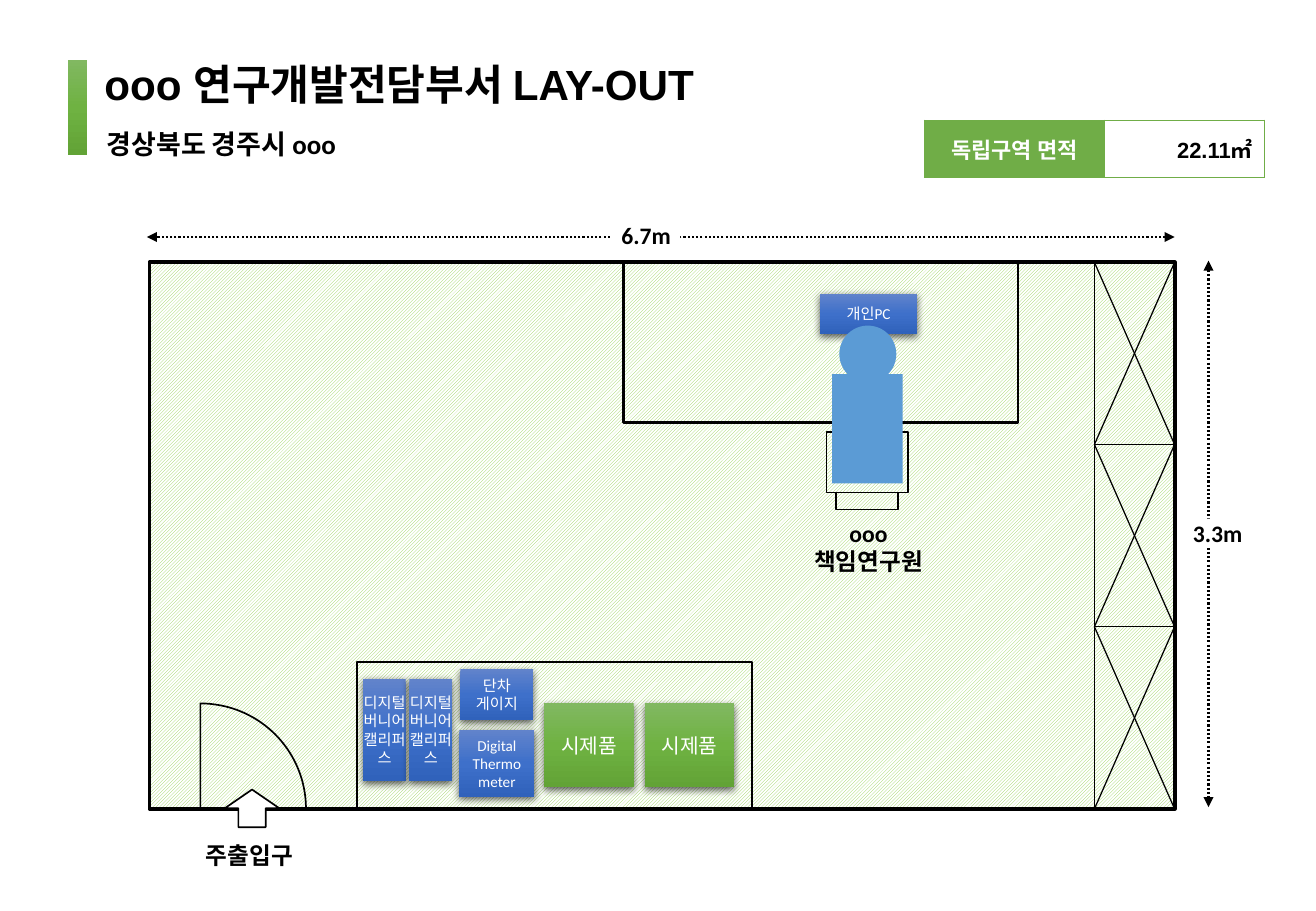
from copy import deepcopy
from math import cos, pi, sin

from lxml.etree import SubElement
from pptx import Presentation
from pptx.dml.color import RGBColor
from pptx.enum.dml import MSO_LINE as Dash, MSO_PATTERN as Pattern
from pptx.enum.shapes import MSO_CONNECTOR as Conn, MSO_SHAPE as Shape
from pptx.enum.text import MSO_ANCHOR as Anchor, MSO_AUTO_SIZE as Auto, PP_ALIGN as Align
from pptx.oxml.ns import qn
from pptx.util import Pt

BLACK = RGBColor(0x00, 0x00, 0x00)
WHITE = RGBColor(0xFF, 0xFF, 0xFF)
GREEN = RGBColor(0x70, 0xAD, 0x47)
HATCH = RGBColor(0x92, 0xD0, 0x50)
PERSON = RGBColor(0x5B, 0x9B, 0xD5)
GREENS = [RGBColor(0x81, 0xB8, 0x61), RGBColor(0x6F, 0xB2, 0x42), RGBColor(0x62, 0xA3, 0x36)]
BLUES = [RGBColor(0x61, 0x83, 0xCB), RGBColor(0x3E, 0x70, 0xCA), RGBColor(0x30, 0x62, 0xBB)]


def write(tf, text, size=14, font="Calibri", color=BLACK, bold=True, align=Align.CENTER,
          anchor=Anchor.TOP, margin=None, spacing=None, wrap=True, auto=Auto.NONE):
    """Fill a text frame, one paragraph to a line of text."""
    tf.word_wrap, tf.auto_size, tf.vertical_anchor = wrap, auto, anchor
    if margin is not None:
        tf.margin_left = tf.margin_right = tf.margin_top = tf.margin_bottom = Pt(margin)
    for i, line in enumerate(text.split("\n")):
        p = tf.add_paragraph() if i else tf.paragraphs[0]
        p.alignment, p.line_spacing = align, spacing
        r = p.add_run()
        r.text = line
        r.font.size, r.font.name, r.font.bold = Pt(size), font, bold
        r.font.color.rgb = color


def paint(sp, fill=None, line=None):
    """Give a shape a solid fill, a black outline of some width, or neither."""
    sp.shadow.inherit = False
    if fill is None:
        sp.fill.background()
    else:
        sp.fill.solid()
        sp.fill.fore_color.rgb = fill
    if line is None:
        sp.line.fill.background()
    else:
        sp.line.color.rgb, sp.line.width = BLACK, Pt(line)


def add_shape(s, kind, box, fill=None, line=None):
    """Add a preset shape in a box of points."""
    sp = s.shapes.add_shape(kind, *map(Pt, box))
    paint(sp, fill, line)
    return sp


def add_text(s, box, text, **fmt):
    """Add a text box in a box of points."""
    sp = s.shapes.add_textbox(*map(Pt, box))
    write(sp.text_frame, text, auto=Auto.SHAPE_TO_FIT_TEXT, **fmt)


def add_line(s, x1, y1, x2, y2, width):
    """Add a black straight line without a shadow."""
    c = s.shapes.add_connector(Conn.STRAIGHT, Pt(x1), Pt(y1), Pt(x2), Pt(y2))
    c.line.color.rgb, c.line.width = BLACK, Pt(width)
    SubElement(c._element.spPr, qn("a:effectLst"))
    return c


def add_gradient(s, box, colors):
    """Add a rectangle with a three-stop gradient from top to bottom."""
    sp = add_shape(s, Shape.RECTANGLE, box)
    sp.fill.gradient()
    sp.fill.gradient_angle = 270
    stops = sp._element.spPr.find(qn("a:gradFill")).find(qn("a:gsLst"))
    stops.insert(1, deepcopy(stops[0]))
    for i, (stop, color) in enumerate(zip(sp.fill.gradient_stops, colors)):
        stop.position, stop.color.rgb = i / 2, color
    return sp


def add_item(s, box, text, colors=BLUES, size=9, margin=None):
    """Add a labelled piece of equipment with a soft shadow."""
    sp = add_gradient(s, box, colors)
    effects = sp._element.spPr.find(qn("a:effectLst"))
    shadow = SubElement(effects, qn("a:outerShdw"), blurRad="57150", dist="19050",
                        dir="5400000", algn="ctr", rotWithShape="0")
    tint = SubElement(shadow, qn("a:srgbClr"), val=str(BLACK))
    SubElement(tint, qn("a:alpha"), val="63000")
    write(sp.text_frame, text, size=size, color=WHITE, bold=False,
          anchor=Anchor.MIDDLE, margin=margin)


def add_header(s, box):
    """Place the green bar, the title and the address."""
    x, y, w, h = box
    add_gradient(s, (x, y + 10.1, 11.5, 56.9), GREENS)
    title = s.shapes.title
    title.left, title.top, title.width, title.height = map(Pt, (x + 14.4, y, w - 14.4, 43.9))
    write(title.text_frame, "ooo 연구개발전담부서 LAY-OUT", size=25, font="Arial",
          align=Align.LEFT, spacing=1.2, auto=Auto.SHAPE_TO_FIT_TEXT)
    add_text(s, (x + 15.9, y + 37.4, 409, 36), "경상북도 경주시 ooo",
             size=16, align=Align.LEFT, spacing=1.5)


def add_area_table(s, box):
    """Place the table with the floor area."""
    table = s.shapes.add_table(1, 2, *map(Pt, box)).table
    table.first_row = table.horz_banding = False
    cells = [("독립구역 면적", 106.6, WHITE, Align.CENTER), ("22.11㎡", 95, BLACK, Align.RIGHT)]
    for i, (text, width, color, align) in enumerate(cells):
        table.columns[i].width = Pt(width)
        cell = table.cell(0, i)
        write(cell.text_frame, text, size=13, font="Arial", color=color, align=align)
        cell.vertical_anchor = Anchor.MIDDLE
        pr = cell._tc.get_or_add_tcPr()
        for side in ("lnL", "lnR", "lnT", "lnB"):
            ln = SubElement(pr, qn("a:" + side), w=str(Pt(1)))
            SubElement(SubElement(ln, qn("a:solidFill")), qn("a:srgbClr"), val=str(GREEN))
        if i:
            cell.fill.background()
        else:
            cell.fill.solid()
            cell.fill.fore_color.rgb = GREEN


def add_dimension(s, ends, label_box, text):
    """Place a dotted double arrow with its length on it."""
    c = add_line(s, *ends, 1.25)
    c.line.dash_style = Dash.ROUND_DOT
    for end in ("a:headEnd", "a:tailEnd"):
        SubElement(c.line._get_or_add_ln(), qn(end), type="triangle")
    label = add_shape(s, Shape.RECTANGLE, label_box, WHITE)
    write(label.text_frame, text, margin=0)


def add_room(s, box):
    """Place the hatched floor and its two dimensions."""
    x, y, w, h = box
    floor = add_shape(s, Shape.FLOWCHART_PROCESS, box, WHITE, 2.25)
    floor.fill.patterned()
    floor.fill.pattern = Pattern.LIGHT_UPWARD_DIAGONAL
    floor.fill.fore_color.rgb, floor.fill.back_color.rgb = HATCH, WHITE
    add_dimension(s, (x + w, y - 15, x - 1.5, y - 15), (x + 274.3, y - 24.5, 40.3, 17.3), "6.7m")
    add_dimension(s, (x + w + 20, y - 1, x + w + 20, y + h - 1),
                  (x + w + 5, y + 152, 41, 17.3), "3.3m")


def add_desk(s, box):
    """Place the desk with its computer, chair and researcher."""
    x, y, w, h = box
    add_item(s, (x + 116.6, y + 18.7, 57.6, 23.8), "개인PC")
    add_shape(s, Shape.RECTANGLE, box, line=1.5)
    add_shape(s, Shape.FLOWCHART_PROCESS, (x + 120.6, y + 100.5, 48.2, 36), line=1)
    add_shape(s, Shape.FLOWCHART_PROCESS, (x + 126.3, y + 136.5, 36.7, 10), line=1)
    add_shape(s, Shape.OVAL, (x + 128.1, y + 37.5, 33.8, 33.8), PERSON)
    add_shape(s, Shape.RECTANGLE, (x + 123.8, y + 66.3, 41.8, 64.8), PERSON)
    add_text(s, (x + 102.9, y + 148.3, 85, 41), "ooo\n책임연구원", wrap=False)


def add_cabinets(s, box, count=3):
    """Place a column of crossed cabinets."""
    x, y, w, h = box
    step = h / count
    for top in (y + i * step for i in range(count)):
        add_shape(s, Shape.RECTANGLE, (x, top, w, step), line=0.75)
        add_line(s, x + w, top, x, top + step, 0.75)
        add_line(s, x, top, x + w, top + step, 0.75)


def add_entrance(s, box, steps=40):
    """Place the door swing, the arrow and the label of the entrance."""
    x, y, w, h = box
    angles = [i * pi / 2 / steps for i in range(steps + 1)]
    builder = s.shapes.build_freeform(Pt(x), Pt(y + h))
    builder.add_line_segments([(Pt(x + w * cos(a)), Pt(y + h - h * sin(a))) for a in angles])
    paint(builder.convert_to_shape(), line=1)
    add_shape(s, Shape.UP_ARROW, (x + 14.4, y + 51, 32.4, 22.3), WHITE, 1)
    add_text(s, (x - 8, y + 77.8, 74.2, 24.5), "주출입구")


def add_bench(s, box):
    """Place the bench with its instruments and samples."""
    x, y, w, h = box
    add_shape(s, Shape.RECTANGLE, box, line=1.5)
    for dx in (3.6, 31):
        add_item(s, (x + dx, y + 10.1, 25.2, 60.5), "디지털버니어\n캘리퍼스", margin=0)
    add_item(s, (x + 61.2, y + 4.3, 43.2, 30.2), "단차\n게이지")
    add_item(s, (x + 60.5, y + 40.3, 44.6, 39.6), "Digital\nThermo\nmeter", margin=0)
    for dx in (110.9, 170.6):
        add_item(s, (x + dx, y + 24.5, 53, 49.7), "시제품", GREENS, 12)


def main():
    """Build the slide and save it."""
    prs = Presentation()
    prs.slide_width, prs.slide_height = Pt(780), Pt(540)
    s = prs.slides.add_slide(prs.slide_layouts[5])
    add_room(s, (88.6, 155.5, 607.7, 324))
    add_area_table(s, (548, 71.3, 201.6, 33.8))
    add_header(s, (40.3, 25.2, 574.6, 74))
    add_desk(s, (369.4, 155.5, 234, 95))
    add_cabinets(s, (648.7, 155.5, 47.5, 324))
    add_entrance(s, (118.8, 417, 62.6, 62.3))
    add_bench(s, (211.7, 392.4, 234, 87.1))
    prs.save("out.pptx")


if __name__ == "__main__":
    main()
